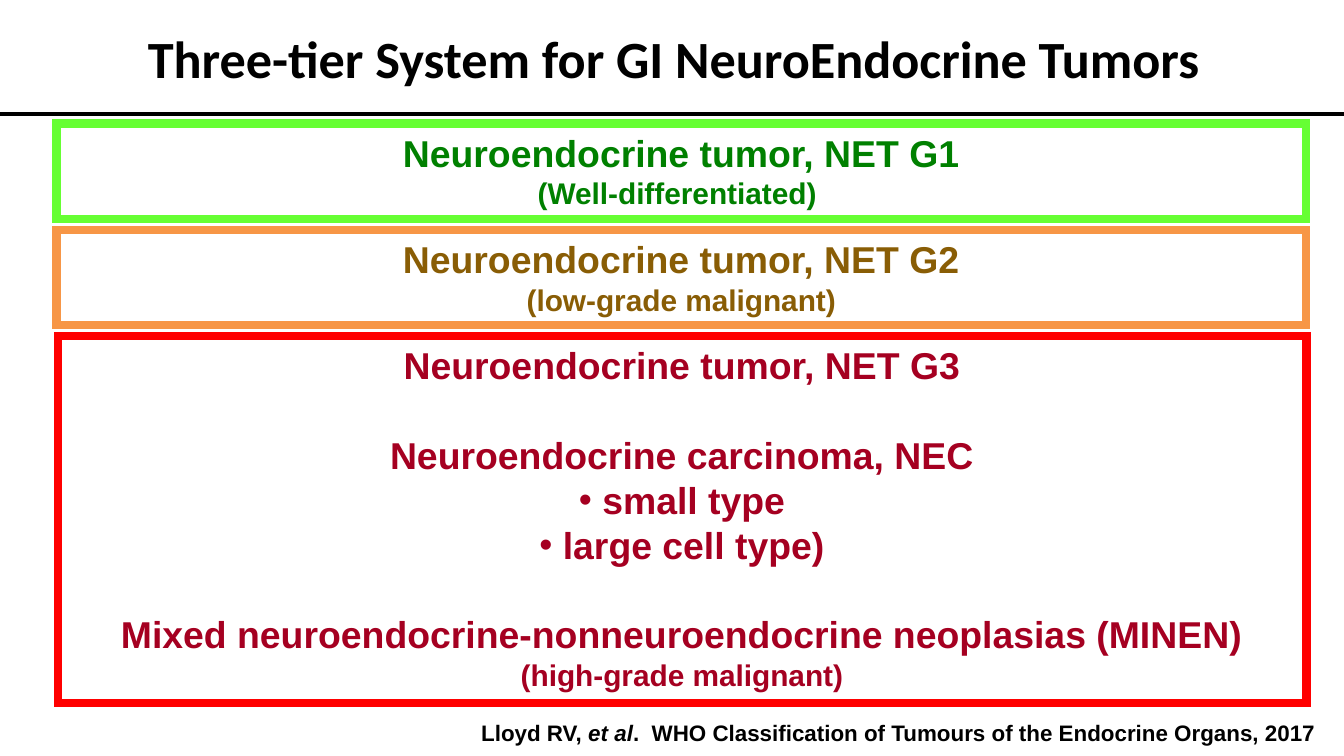
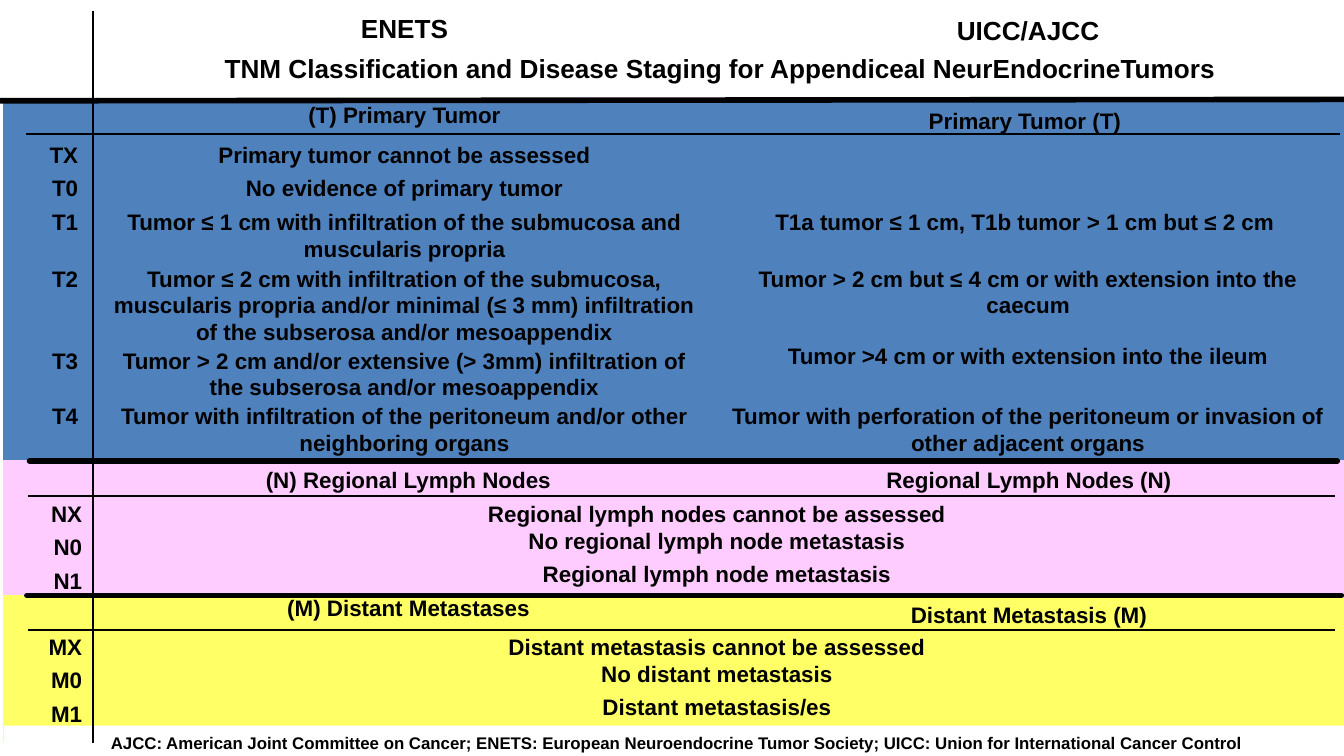
from lxml.etree import SubElement
from pptx import Presentation
from pptx.dml.color import RGBColor
from pptx.enum.shapes import MSO_CONNECTOR, MSO_SHAPE
from pptx.enum.text import MSO_ANCHOR, MSO_AUTO_SIZE, PP_ALIGN
from pptx.oxml.ns import qn
from pptx.util import Inches, Pt

WIDTH = 10
HEIGHT = WIDTH * 9 / 16
BLACK = RGBColor(0x00, 0x00, 0x00)
WHITE = RGBColor(0xFF, 0xFF, 0xFF)
GREEN = RGBColor(0x00, 0x80, 0x00)
LIME = RGBColor(0x66, 0xFF, 0x33)
BROWN = RGBColor(0x89, 0x5D, 0x05)
ORANGE = RGBColor(0xF7, 0x96, 0x46)
CRIMSON = RGBColor(0xA5, 0x00, 0x21)
RED = RGBColor(0xFF, 0x00, 0x00)
BLUE = RGBColor(0x4F, 0x81, 0xBD)
PINK = RGBColor(0xFF, 0xCC, 0xFF)
YELLOW = RGBColor(0xFF, 0xFF, 0x66)

GRADES_TITLE = "Three-tier System for GI NeuroEndocrine Tumors"
GRADES = [
    (0.42, 0.92, 0.71, WHITE, LIME, GREEN, [
        ("Neuroendocrine tumor, NET G1", {}),
        ("(Well-differentiated) ", {"size": 16}),
    ]),
    (0.42, 1.71, 0.71, WHITE, ORANGE, BROWN, [
        ("Neuroendocrine tumor, NET G2", {}),
        ("(low-grade malignant)", {"size": 16}),
    ]),
    (0.43, 2.5, 2.73, None, RED, CRIMSON, [
        ("Neuroendocrine tumor, NET G3", {}),
        ("Neuroendocrine carcinoma, NEC", {"before": 24}),
        (" small type", {"bullet": True}),
        (" large cell type)", {"bullet": True}),
        ("Mixed neuroendocrine-nonneuroendocrine neoplasias (MINEN)", {"before": 24}),
        ("(high-grade malignant)", {"size": 16}),
    ]),
]
GRADES_RIGHT = 9.72
CITATION = [
    ("Lloyd RV, ", False),
    ("et al", True),
    (".  WHO Classification of Tumours of the Endocrine Organs, 2017", False),
]

STAGING_TITLE = "TNM Classification and Disease Staging for Appendiceal NeurEndocrineTumors"
SYSTEMS = [("ENETS", 0.04), ("UICC/AJCC", 0.06)]
BANDS = [(0.75, 2.67, BLUE), (3.43, 1, PINK), (4.43, 1.08, YELLOW)]
HEADINGS = [
    ("(T) Primary Tumor", "Primary Tumor (T) ", 0.75, 0.75),
    ("(N) Regional Lymph Nodes", "Regional Lymph Nodes (N) ", 3.47, 3.42),
    ("(M) Distant Metastases", "Distant Metastasis (M) ", 4.42, 4.42),
]
TUMOR_STAGES = [
    ("TX", 1, "Primary tumor cannot be assessed", ""),
    ("T0", 1.25, "No evidence of primary tumor", ""),
    ("T1", 1.5, "Tumor ≤ 1 cm with infiltration of the submucosa and muscularis propria",
     "T1a tumor ≤ 1 cm, T1b tumor > 1 cm but ≤ 2 cm "),
    ("T2", 1.92, "Tumor ≤ 2 cm with infiltration of the submucosa, muscularis propria "
     "and/or minimal (≤ 3 mm) infiltration of the subserosa and/or mesoappendix",
     "Tumor > 2 cm but ≤ 4 cm or with extension into the caecum"),
    ("T3", 2.53, "Tumor > 2 cm and/or extensive (> 3mm) infiltration of the subserosa "
     "and/or mesoappendix", "Tumor >4 cm or with extension into the ileum"),
    ("T4", 2.94, "Tumor with infiltration of the peritoneum and/or other neighboring organs",
     "Tumor with perforation of the peritoneum or invasion of other adjacent organs"),
]
SPREAD_STAGES = [
    (3.67, [
        ("NX", "Regional lymph nodes cannot be assessed"),
        ("N0", "No regional lymph node metastasis"),
        ("N1", "Regional lymph node metastasis"),
    ]),
    (4.66, [
        ("MX", "Distant metastasis cannot be assessed"),
        ("M0", "No distant metastasis"),
        ("M1", "Distant metastasis/es"),
    ]),
]
ABBREVIATIONS = ("AJCC: American Joint Committee on Cancer; ENETS: European Neuroendocrine "
                 "Tumor Society; UICC: Union for International Cancer Control")
ROW = 0.25
TALL_ROW = 0.42
LABEL_LEFT, LABEL_WIDTH = 0.19, 0.49
COLUMN_LEFT, COLUMN_WIDTH = 0.69, 4.64
SPREAD_SHIFT = 0.03
STAGING_RULES = [
    (0.2, 4.43, 9.98, 4.43, 3),
    (0.69, 0.08, 0.69, 5.53, 1),
    (0.19, 1, 9.97, 1, 1),
    (0.22, 3.43, 9.95, 3.43, 3),
    (0.21, 3.69, 9.93, 3.69, 1),
    (0.21, 4.69, 9.93, 4.69, 1),
    (0, 0.75, WIDTH, 0.74, 3),
]


def write(shape, content, size=12, color=BLACK, font="Arial",
          align=PP_ALIGN.CENTER, anchor=MSO_ANCHOR.TOP):
    frame = shape.text_frame
    frame.word_wrap = True
    frame.auto_size = MSO_AUTO_SIZE.NONE
    frame.vertical_anchor = anchor
    paragraphs = [(content, {})] if isinstance(content, str) else content
    for index, (words, style) in enumerate(paragraphs):
        paragraph = frame.paragraphs[0] if index == 0 else frame.add_paragraph()
        paragraph.alignment = align
        if "before" in style:
            paragraph.space_before = Pt(style["before"])
        if style.get("bullet"):
            properties = paragraph._p.get_or_add_pPr()
            properties.set("marL", str(Inches(0.01)))
            properties.set("indent", str(-Inches(0.01)))
            SubElement(properties, qn("a:buFont"), typeface="Arial")
            SubElement(properties, qn("a:buChar"), char="•")
        for text, italic in [(words, False)] if isinstance(words, str) else words:
            run = paragraph.add_run()
            run.text = text
            run.font.name = font
            run.font.size = Pt(style.get("size", size))
            run.font.bold = True
            run.font.italic = italic
            run.font.color.rgb = color


def place_text(slide, content, left, top, width, height, **style):
    box = slide.shapes.add_textbox(*map(Inches, (left, top, width, height)))
    write(box, content, **style)


def place_title(slide, text, left, top, width, height, **style):
    title = slide.shapes.title
    title.left, title.top, title.width, title.height = map(Inches, (left, top, width, height))
    write(title, text, **style)


def place_box(slide, left, top, width, height, fill=None, line=None, weight=0.75):
    box = slide.shapes.add_shape(MSO_SHAPE.RECTANGLE, *map(Inches, (left, top, width, height)))
    box.shadow.inherit = False
    if fill is None:
        box.fill.background()
    else:
        box.fill.solid()
        box.fill.fore_color.rgb = fill
    if line is None:
        box.line.fill.background()
    else:
        box.line.color.rgb = line
        box.line.width = Pt(weight)
        SubElement(box.line._get_or_add_ln(), qn("a:miter"), lim="800000")
    return box


def place_rule(slide, x1, y1, x2, y2, weight):
    rule = slide.shapes.add_connector(MSO_CONNECTOR.STRAIGHT, *map(Inches, (x1, y1, x2, y2)))
    rule.line.color.rgb = BLACK
    rule.line.width = Pt(weight)
    if weight == 3:
        rule.line._get_or_add_ln().set("cap", "rnd")
    SubElement(rule._element.spPr, qn("a:effectLst"))


def build_grades(slide):
    place_title(slide, GRADES_TITLE, 0.51, 0.04, 9, 0.77, size=28, font="Calibri",
                anchor=MSO_ANCHOR.MIDDLE)
    for left, top, height, fill, border, ink, lines in GRADES:
        grade = place_box(slide, left, top, GRADES_RIGHT - left, height,
                          fill=fill, line=border, weight=4.5)
        write(grade, lines, size=20, color=ink)
    place_text(slide, [(CITATION, {})], 0.32, 5.3, 9.57, 0.3, align=PP_ALIGN.RIGHT)
    place_rule(slide, 0, 0.85, WIDTH, 0.85, 2.25)


def build_staging(slide):
    right_column = COLUMN_LEFT + COLUMN_WIDTH
    for top, height, color in BANDS:
        place_box(slide, 0.03, top, WIDTH, height, fill=color, line=color)
    place_title(slide, STAGING_TITLE, COLUMN_LEFT, 0.34, 9.34, TALL_ROW, size=14)
    for column, (system, top) in enumerate(SYSTEMS):
        place_text(slide, system, COLUMN_LEFT + column * COLUMN_WIDTH, top,
                   COLUMN_WIDTH, ROW, size=14)
    for index, (enets, uicc, enets_top, uicc_top) in enumerate(HEADINGS):
        shift = SPREAD_SHIFT if index else 0
        place_text(slide, enets, COLUMN_LEFT + shift, enets_top, COLUMN_WIDTH, ROW,
                   anchor=MSO_ANCHOR.BOTTOM)
        place_text(slide, uicc, right_column + shift, uicc_top, COLUMN_WIDTH, ROW)
    for stage, top, enets, uicc in TUMOR_STAGES:
        place_text(slide, stage, LABEL_LEFT, top, LABEL_WIDTH, TALL_ROW, align=PP_ALIGN.RIGHT)
        place_text(slide, enets, COLUMN_LEFT, top, COLUMN_WIDTH, TALL_ROW)
        if uicc:
            uicc_top = top - 0.03 if stage == "T3" else top
            place_text(slide, uicc, right_column, uicc_top, COLUMN_WIDTH, TALL_ROW)
    for first, stages in SPREAD_STAGES:
        for index, (stage, finding) in enumerate(stages):
            top = first + index * ROW
            place_text(slide, stage, LABEL_LEFT + SPREAD_SHIFT, top, LABEL_WIDTH, ROW,
                       align=PP_ALIGN.RIGHT)
            place_text(slide, finding, COLUMN_LEFT + SPREAD_SHIFT, top, 9.23, ROW,
                       anchor=MSO_ANCHOR.BOTTOM if index else MSO_ANCHOR.TOP)
    write(place_box(slide, 0.03, 5.4, WIDTH, ROW, fill=WHITE), ABBREVIATIONS, size=9)
    for rule in STAGING_RULES:
        place_rule(slide, *rule)


def main():
    deck = Presentation()
    deck.slide_width, deck.slide_height = Inches(WIDTH), Inches(HEIGHT)
    title_only = deck.slide_layouts[5]
    for build in (build_grades, build_staging):
        build(deck.slides.add_slide(title_only))
    deck.save("out.pptx")


if __name__ == "__main__":
    main()
